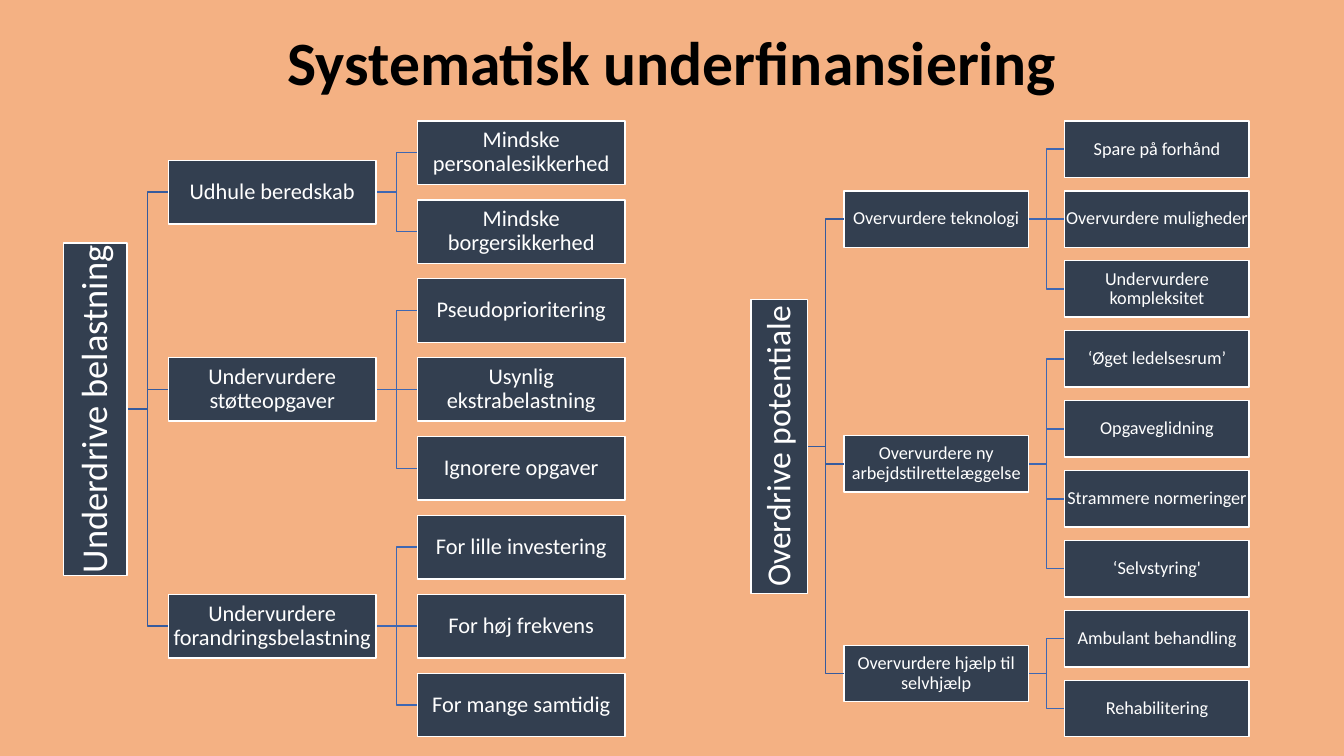
from lxml import etree
from pptx import Presentation
from pptx.dml.color import RGBColor
from pptx.enum import shapes, text
from pptx.oxml import ns
from pptx.util import Inches, Pt

TOP, BOTTOM = 1.2, 7.31

UNDERSTATED_LOAD = {
    "Udhule beredskab": ["Mindske personalesikkerhed", "Mindske borgersikkerhed"],
    "Undervurdere støtteopgaver": [
        "Pseudoprioritering", "Usynlig ekstrabelastning", "Ignorere opgaver"],
    "Undervurdere forandringsbelastning": [
        "For lille investering", "For høj frekvens", "For mange samtidig"],
}
OVERSTATED_POTENTIAL = {
    "Overvurdere teknologi": [
        "Spare på forhånd", "Overvurdere muligheder", "Undervurdere kompleksitet"],
    "Overvurdere ny arbejdstilrettelæggelse": [
        "‘Øget ledelsesrum’", "Opgaveglidning", "Strammere normeringer", "‘Selvstyring'"],
    "Overvurdere hjælp til selvhjælp": ["Ambulant behandling", "Rehabilitering"],
}


def color(value):
    return RGBColor.from_string(value)


class TreeSlide:
    font = "Calibri"
    background = "F4B183"
    box_fill = "333F50"
    light = "FFFFFF"
    dark = "000000"
    root_link = "365B9D"
    branch_link = "3E67B2"

    def __init__(self, presentation):
        self.slide = presentation.slides.add_slide(presentation.slide_layouts[5])
        fill = self.slide.background.fill
        fill.solid()
        fill.fore_color.rgb = color(self.background)

    def format_text(self, frame, size, font_color, bold=False):
        frame.auto_size = text.MSO_AUTO_SIZE.NONE
        frame.vertical_anchor = text.MSO_ANCHOR.MIDDLE
        paragraph = frame.paragraphs[0]
        paragraph.alignment = text.PP_ALIGN.CENTER
        paragraph.line_spacing = 0.9
        font = paragraph.runs[0].font
        font.name, font.size, font.bold = self.font, Pt(size), bold
        font.color.rgb = color(font_color)

    def title(self, label):
        shape = self.slide.shapes.title
        shape.left, shape.top = Inches(0.92), Inches(0.19)
        shape.width, shape.height = Inches(11.5), Inches(0.92)
        shape.text_frame.text = label
        self.format_text(shape.text_frame, 44, self.dark, bold=True)

    def box(self, label, center_x, center_y, width, height, size, rotation=0):
        shape = self.slide.shapes.add_shape(
            shapes.MSO_SHAPE.RECTANGLE,
            Inches(center_x - width / 2), Inches(center_y - height / 2),
            Inches(width), Inches(height))
        shape.rotation = rotation
        shape.shadow.inherit = False
        shape.fill.solid()
        shape.fill.fore_color.rgb = color(self.box_fill)
        shape.line.color.rgb = color(self.light)
        shape.line.width = Pt(1)
        frame = shape.text_frame
        frame.margin_left = frame.margin_right = 0
        frame.margin_top = frame.margin_bottom = Inches(0.01)
        frame.word_wrap = rotation == 0
        frame.text = label
        self.format_text(frame, size, self.light)

    def link(self, start_x, start_y, end_x, end_y, line_color):
        connector = self.slide.shapes.add_connector(
            shapes.MSO_CONNECTOR.ELBOW,
            Inches(start_x), Inches(start_y), Inches(end_x), Inches(end_y))
        connector.line.color.rgb = color(line_color)
        connector.line.width = Pt(1)
        etree.SubElement(connector._element.spPr, ns.qn("a:effectLst"))

    def tree(self, root, branches, left, height, width, gap, root_length, root_size, size):
        """Draw a root, its branches and their leaves; each parent is centred on its children."""
        branch_left = left + height + gap
        leaf_left = branch_left + width + gap
        leaf_count = sum(len(leaves) for leaves in branches.values())
        pitch = (BOTTOM - TOP - height) / (leaf_count - 1)
        leaf_y = TOP + height / 2
        branch_centers = []
        for branch, leaves in branches.items():
            centers = [leaf_y + pitch * index for index in range(len(leaves))]
            leaf_y += pitch * len(leaves)
            branch_y = (centers[0] + centers[-1]) / 2
            branch_centers.append(branch_y)
            for leaf, center in zip(leaves, centers):
                self.link(branch_left + width, branch_y, leaf_left, center, self.branch_link)
                self.box(leaf, leaf_left + width / 2, center, width, height, size)
            self.box(branch, branch_left + width / 2, branch_y, width, height, size)
        root_y = (branch_centers[0] + branch_centers[-1]) / 2
        for branch_y in branch_centers:
            self.link(left + height, root_y, branch_left, branch_y, self.root_link)
        self.box(root, left + height / 2, root_y, root_length, height, root_size, rotation=270)


def main():
    presentation = Presentation()
    presentation.slide_width, presentation.slide_height = Inches(13.33), Inches(7.5)
    slide = TreeSlide(presentation)
    slide.title("Systematisk underfinansiering")
    slide.tree("Underdrive belastning", UNDERSTATED_LOAD, left=0.63, height=0.63,
               width=2.06, gap=0.41, root_length=3.3, root_size=26, size=16)
    slide.tree("Overdrive potentiale", OVERSTATED_POTENTIAL, left=7.45, height=0.56,
               width=1.83, gap=0.36, root_length=2.92, root_size=24, size=13)
    presentation.save("out.pptx")


if __name__ == "__main__":
    main()
